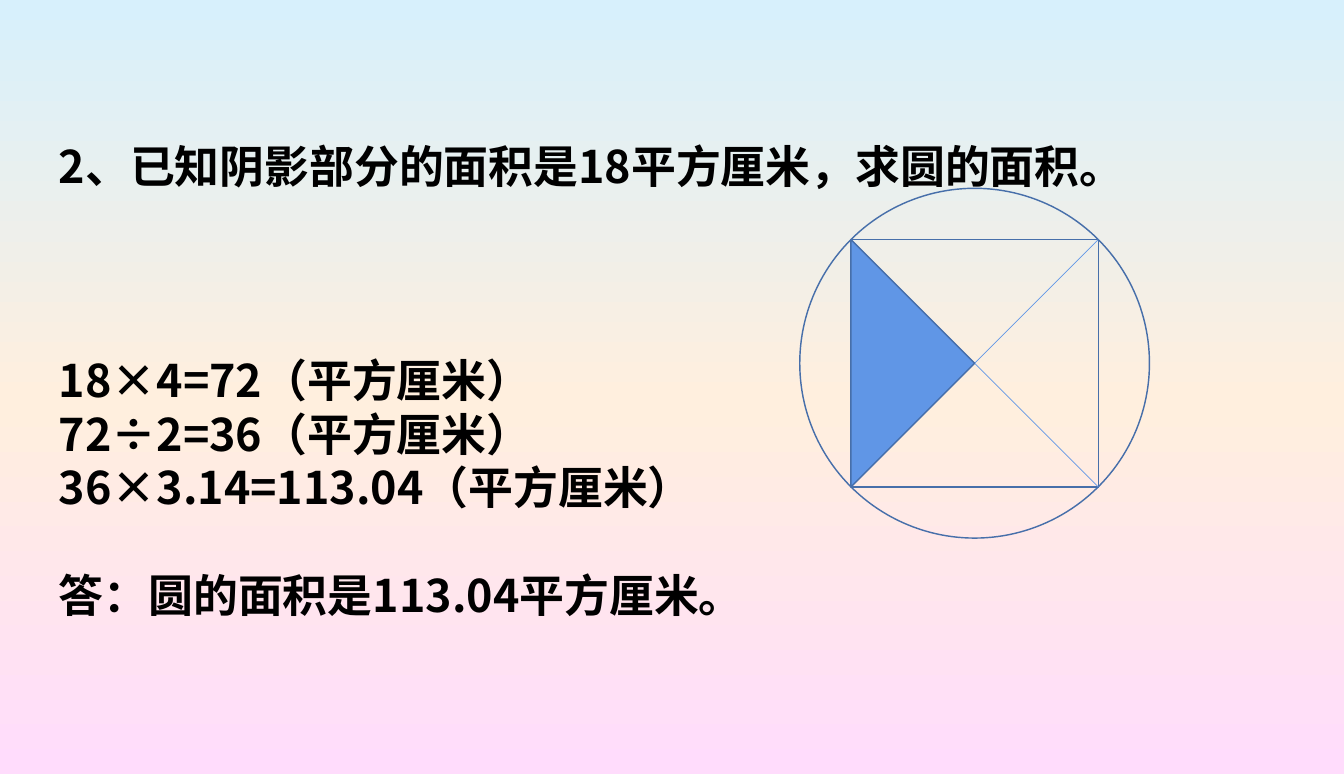
from copy import deepcopy
from math import sqrt

from lxml.etree import SubElement
from pptx import Presentation
from pptx.dml.color import RGBColor
from pptx.enum.lang import MSO_LANGUAGE_ID
from pptx.enum.shapes import MSO_CONNECTOR, MSO_SHAPE
from pptx.oxml.ns import qn
from pptx.util import Inches, Pt

BLACK = RGBColor(0x00, 0x00, 0x00)
OUTLINE = RGBColor(0x47, 0x6F, 0xAA)
SHADED = RGBColor(0x60, 0x96, 0xE6)
BACKGROUND = [
    (0, RGBColor(0xD7, 0xF0, 0xFC)),
    (0.52, RGBColor(0xFF, 0xEF, 0xDE)),
    (1, RGBColor(0xFF, 0xDC, 0xFC)),
]
FONT = "Noto Sans CJK SC"
LINE_PITCH = 37.3

# Each line of text with the number of empty lines above it
SOLUTION = [
    ("2、已知阴影部分的面积是18平方厘米，求圆的面积。", 0),
    ("18×4=72（平方厘米）", 3),
    ("72÷2=36（平方厘米）", 0),
    ("36×3.14=113.04（平方厘米）", 0),
    ("答：圆的面积是113.04平方厘米。", 1),
]

CENTER_X, CENTER_Y = 9.42, 3.51
SIDE = 2.39
LEFT, RIGHT = CENTER_X - SIDE / 2, CENTER_X + SIDE / 2
TOP, BOTTOM = CENTER_Y - SIDE / 2, CENTER_Y + SIDE / 2


def paint_background(page):
    fill = page.background.fill
    fill.gradient()
    fill.gradient_angle = 270
    stop_list = page.element.xpath(".//p:bg//a:gsLst")[0]
    stop_list.append(deepcopy(stop_list[-1]))
    for stop, (position, color) in zip(fill.gradient_stops, BACKGROUND):
        stop.position = position
        stop.color.rgb = color


def add_text(para, text, *, size, color, bold=False):
    span = para.add_run()
    span.text = text
    span.font.name = FONT
    span.font.size = Pt(size)
    span.font.bold = bold
    span.font.color.rgb = color
    span.font.language_id = MSO_LANGUAGE_ID.SIMPLIFIED_CHINESE
    SubElement(span.font._element, qn("a:ea"), typeface=FONT)


def add_solution(page):
    box = page.shapes.add_textbox(Inches(0.47), Inches(1.29), Inches(12.05), Inches(4.77))
    frame = box.text_frame
    frame.word_wrap = True
    for index, (text, gap) in enumerate(SOLUTION):
        para = frame.add_paragraph() if index else frame.paragraphs[0]
        para.line_spacing = Pt(LINE_PITCH)
        if gap:
            para.space_before = Pt(gap * LINE_PITCH)
        add_text(para, text, size=31.2, color=BLACK, bold=True)


def style_outline(shape):
    shape.shadow.inherit = False
    shape.line.color.rgb = OUTLINE
    shape.line.width = Pt(1)


def add_centered_outline(page, kind, size):
    shape = page.shapes.add_shape(
        kind,
        Inches(CENTER_X - size / 2), Inches(CENTER_Y - size / 2),
        Inches(size), Inches(size),
    )
    shape.fill.background()
    style_outline(shape)


def add_diagonal(page, start_y, end_y):
    line = page.shapes.add_connector(
        MSO_CONNECTOR.STRAIGHT,
        Inches(LEFT), Inches(start_y), Inches(RIGHT), Inches(end_y),
    )
    line.line.color.rgb = SHADED
    line.line.width = Pt(0.5)
    SubElement(line.element.spPr, qn("a:effectLst"))


def add_shaded_triangle(page):
    builder = page.shapes.build_freeform(Inches(LEFT), Inches(BOTTOM))
    builder.add_line_segments(
        [(Inches(LEFT), Inches(TOP)), (Inches(CENTER_X), Inches(CENTER_Y))], close=True
    )
    triangle = builder.convert_to_shape()
    triangle.fill.solid()
    triangle.fill.fore_color.rgb = SHADED
    style_outline(triangle)


def main():
    deck = Presentation()
    deck.slide_width = Inches(12.99)
    deck.slide_height = Inches(7.48)
    page = deck.slides.add_slide(deck.slide_layouts[6])
    paint_background(page)
    add_solution(page)
    add_centered_outline(page, MSO_SHAPE.RECTANGLE, SIDE)
    add_centered_outline(page, MSO_SHAPE.OVAL, SIDE * sqrt(2))
    add_diagonal(page, TOP, BOTTOM)
    add_diagonal(page, BOTTOM, TOP)
    add_shaded_triangle(page)
    deck.save("out.pptx")


if __name__ == "__main__":
    main()
